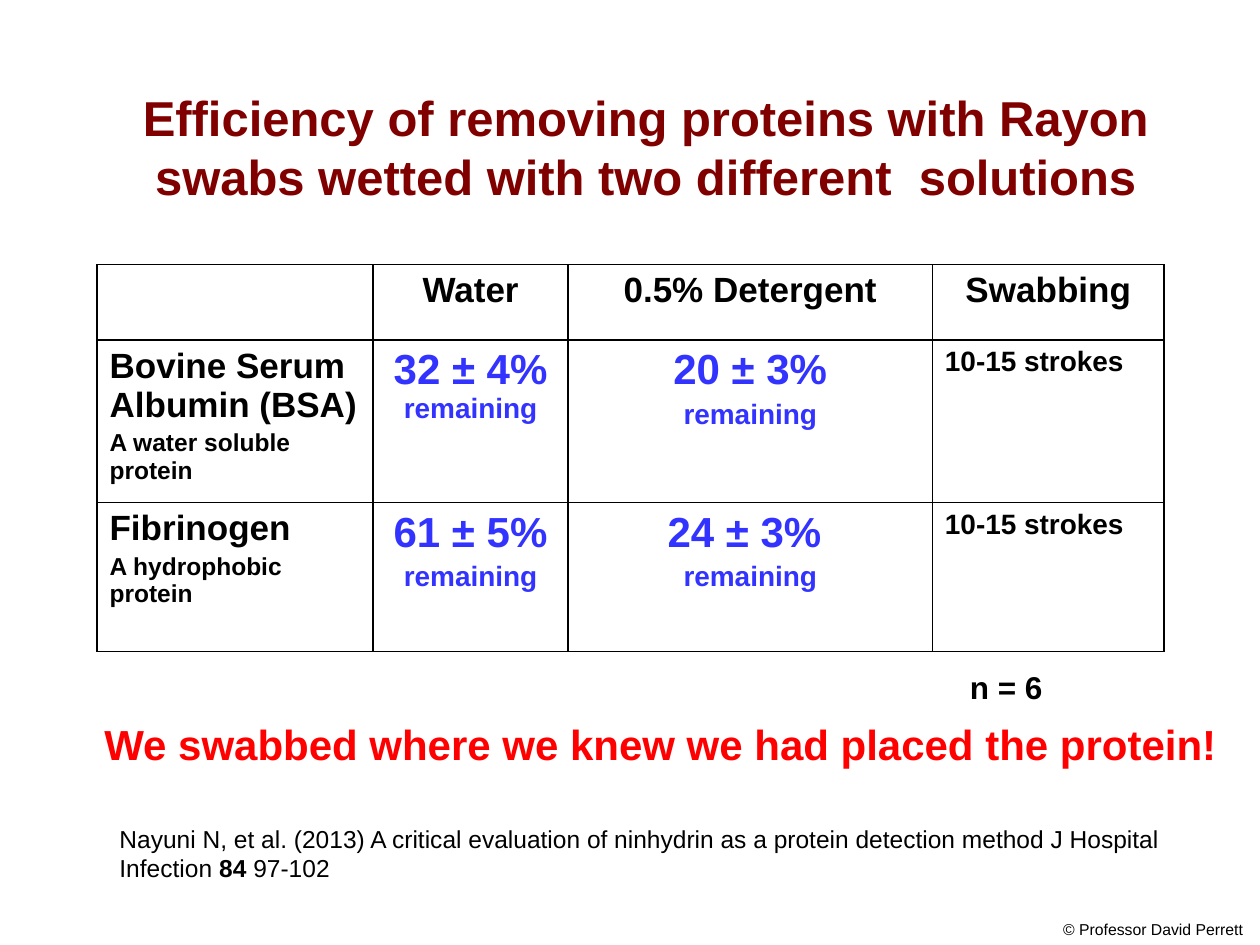
from lxml.etree import SubElement
from pptx import Presentation
from pptx.dml.color import RGBColor
from pptx.enum.text import MSO_ANCHOR as Anchor, MSO_AUTO_SIZE as AutoSize, PP_ALIGN as Align
from pptx.oxml.ns import qn
from pptx.util import Inches, Pt

COLORS = {"maroon": "800000", "black": "000000", "blue": "3333FF", "red": "FF0000"}


class SlideBuilder:
    """Holds the style and the current slide, and adds text and tables to it."""

    font_name = "Arial"
    space_ratio = 0.2

    def __init__(self, slide):
        self.slide = slide

    def add_run(self, paragraph, text, size, color="black", bold=True):
        run = paragraph.add_run()
        run.text = text
        run.font.name = self.font_name
        run.font.size = Pt(size)
        run.font.bold = bold
        run.font.color.rgb = RGBColor.from_string(COLORS[color])

    def fill_text(self, text_frame, paragraphs, align):
        for index, runs in enumerate(paragraphs):
            paragraph = text_frame.add_paragraph() if index else text_frame.paragraphs[0]
            paragraph.alignment = align
            if index:
                paragraph.space_before = Pt(runs[0][1] * self.space_ratio)
            for run in runs:
                self.add_run(paragraph, *run)

    def add_text(self, position, runs, align=Align.LEFT, anchor=Anchor.TOP, wrap=True, grow=True):
        shape = self.slide.shapes.add_textbox(*map(Inches, position))
        text_frame = shape.text_frame
        text_frame.word_wrap = wrap
        text_frame.auto_size = AutoSize.SHAPE_TO_FIT_TEXT if grow else AutoSize.NONE
        text_frame.vertical_anchor = anchor
        self.fill_text(text_frame, [runs], align)

    def add_borders(self, cell):
        properties = cell._tc.get_or_add_tcPr()
        for side in ("lnL", "lnR", "lnT", "lnB"):
            line = SubElement(properties, qn(f"a:{side}"), w=str(Pt(1)))
            fill = SubElement(line, qn("a:solidFill"))
            SubElement(fill, qn("a:srgbClr"), val=COLORS["black"])

    def add_table(self, position, widths, heights, rows):
        shape = self.slide.shapes.add_table(len(heights), len(widths), *map(Inches, position))
        table = shape.table
        table.first_row = table.horz_banding = False
        for column, width in zip(table.columns, widths):
            column.width = Inches(width)
        for row, height in zip(table.rows, heights):
            row.height = Inches(height)
        for row_index, row in enumerate(rows):
            for column_index, paragraphs in enumerate(row):
                cell = table.cell(row_index, column_index)
                self.add_borders(cell)
                cell.fill.background()
                centered = row_index == 0 or column_index in (1, 2)
                self.fill_text(cell.text_frame, paragraphs, Align.CENTER if centered else Align.LEFT)


def protein(name, description):
    return [[(name, 20)], [(description, 14)]]


def result(value):
    return [[(value, 24, "blue")], [("remaining", 16, "blue")]]


def main():
    presentation = Presentation()
    presentation.slide_width, presentation.slide_height = Inches(10), Inches(7.5)
    builder = SlideBuilder(presentation.slides.add_slide(presentation.slide_layouts[6]))

    title = "Efficiency of removing proteins with Rayon swabs wetted with two different  solutions"
    builder.add_text((0.5, 0.3, 9.25, 1.72), [(title, 28, "maroon")],
                     align=Align.CENTER, anchor=Anchor.MIDDLE, grow=False)

    header = [[]] + [[[(label, 20)]] for label in ("Water", "0.5% Detergent", "Swabbing")]
    strokes = [[("10-15 strokes", 16)]]
    albumin_in_water = [[("32 ± 4% ", 24, "blue"), ("remaining", 16, "blue")]]
    rows = [
        header,
        [protein("Bovine Serum Albumin (BSA)", "A water soluble protein"),
         albumin_in_water, result("20 ± 3%"), strokes],
        [protein("Fibrinogen", "A hydrophobic protein"),
         result("61 ± 5%"), result("24 ± 3% "), strokes],
    ]
    builder.add_table((0.77, 2.1, 8.47, 3.07), (2.19, 1.55, 2.89, 1.84), (0.6, 1.29, 1.18), rows)

    builder.add_text((7.6, 5.25, 1.33, 0.4), [("n = 6", 18)])
    builder.add_text((8.34, 7.25, 1.66, 0.25),
                     [("© Professor David Perrett", 9, "black", False)], wrap=False)
    builder.add_text((0.73, 5.65, 9.03, 0.5),
                     [("We swabbed where we knew we had placed the protein!", 24, "red")], wrap=False)
    citation = ("Nayuni N, et al. (2013) A critical evaluation of ninhydrin as a protein "
                "detection method J Hospital Infection ")
    builder.add_text((0.85, 6.49, 8.5, 0.57),
                     [(citation, 14, "black", False), ("84", 14), (" 97-102", 14, "black", False)])

    presentation.save("out.pptx")


if __name__ == "__main__":
    main()
